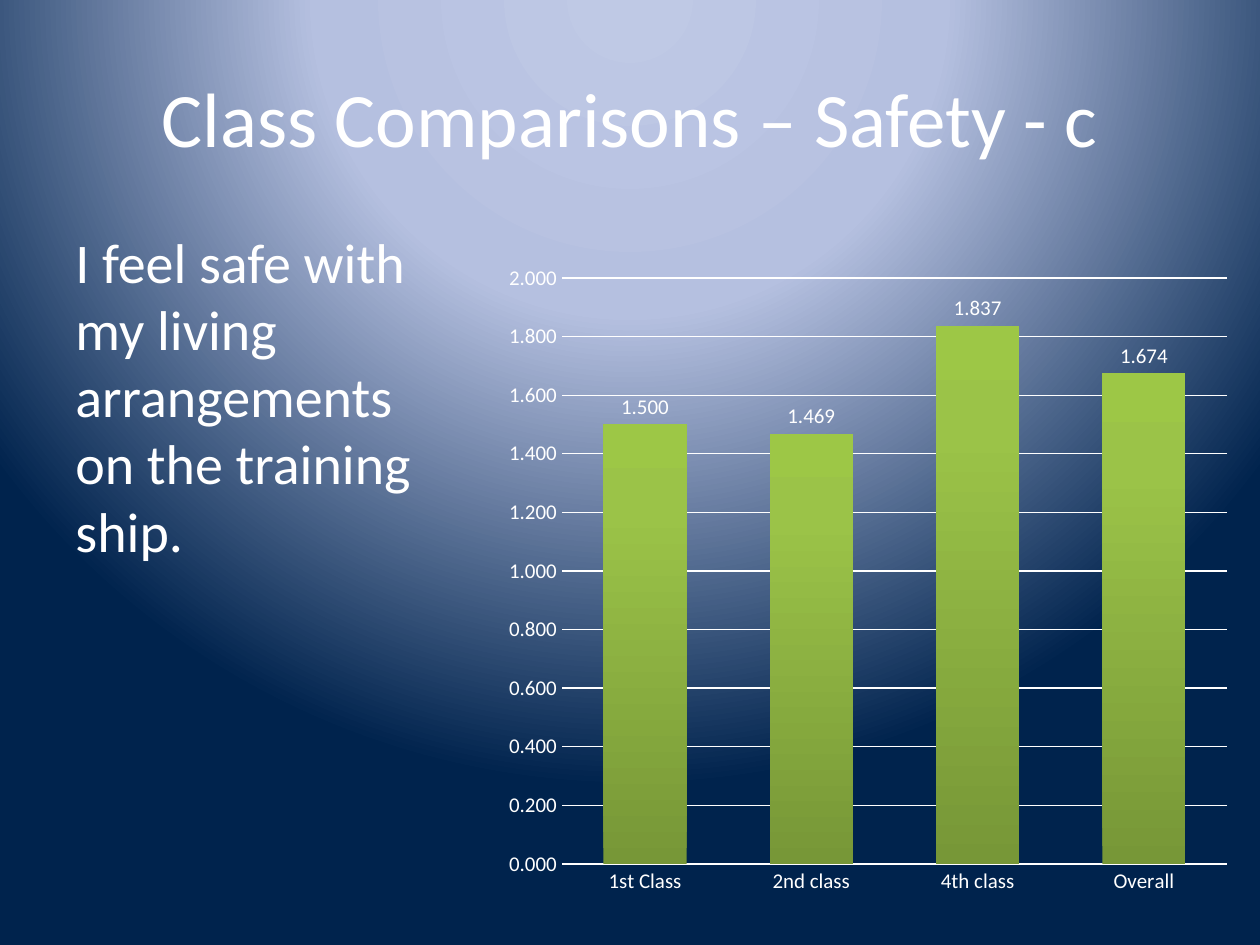
"""Build a slide comparing how safe each class feels on the training ship."""
from lxml.etree import SubElement
from pptx import Presentation
from pptx.chart.data import CategoryChartData
from pptx.dml.color import RGBColor
from pptx.enum.chart import XL_CHART_TYPE, XL_LABEL_POSITION, XL_TICK_MARK
from pptx.enum.text import MSO_ANCHOR, PP_ALIGN
from pptx.oxml import parse_xml
from pptx.oxml.ns import nsdecls, qn
from pptx.util import Emu, Pt

EMU_PER_PX = 914400 / 126
COLORS = {
    "text": "FFFFFF",
    "glow": "BFC9E5",
    "haze": "B5C0E0",
    "navy": "00234D",
    "bar_base": "779737",
    "bar_body": "9BC348",
    "bar_top": "9DC746",
}
PLOT_AREA = {"x": 0.08, "y": 0.04, "w": 0.92, "h": 0.9}
SAFETY_SCORES = {"1st Class": 1.5, "2nd class": 1.469, "4th class": 1.837, "Overall": 1.674}


def px(length):
    return Emu(round(length * EMU_PER_PX))


def color(name):
    return RGBColor.from_string(COLORS[name])


def apply_gradient(parent, stops, direction):
    stop_xml = "".join(
        f'<a:gs pos="{percent * 1000}"><a:srgbClr val="{COLORS[name]}"/></a:gs>'
        for percent, name in stops
    )
    gradient = parse_xml(
        f'<a:gradFill {nsdecls("a")} rotWithShape="1">'
        f"<a:gsLst>{stop_xml}</a:gsLst>{direction}</a:gradFill>"
    )
    parent.replace(parent.find(qn("a:solidFill")), gradient)


class SlideBuilder:
    def __init__(self, slide, font="Calibri"):
        self.slide = slide
        self.font = font

    def style(self, font, size):
        font.name = self.font
        font.size = Pt(size)
        font.color.rgb = color("text")

    def background(self, stops):
        self.slide.background.fill.solid()
        apply_gradient(
            self.slide.element.find(".//" + qn("p:bgPr")),
            stops,
            '<a:path path="circle">'
            '<a:fillToRect l="50000" t="-80000" r="50000" b="180000"/></a:path>',
        )

    def set_text(self, shape, text, size, align, anchor):
        frame = shape.text_frame
        frame.word_wrap = True
        frame.vertical_anchor = anchor
        frame.text = text
        paragraph = frame.paragraphs[0]
        paragraph.alignment = align
        for run in paragraph.runs:
            self.style(run.font, size)

    def title(self, text, left, top, width, height):
        heading = self.slide.shapes.title
        heading.left, heading.top = px(left), px(top)
        heading.width, heading.height = px(width), px(height)
        self.set_text(heading, text, 44, PP_ALIGN.CENTER, MSO_ANCHOR.MIDDLE)

    def body(self, text, left, top, width, height):
        statement = self.slide.shapes.add_textbox(px(left), px(top), px(width), px(height))
        self.set_text(statement, text, 32, PP_ALIGN.LEFT, MSO_ANCHOR.TOP)

    def column_chart(self, scores, left, top, width, height):
        data = CategoryChartData(number_format="0.000")
        data.categories = list(scores)
        data.add_series("Series 1", list(scores.values()))
        chart = self.slide.shapes.add_chart(
            XL_CHART_TYPE.COLUMN_CLUSTERED, px(left), px(top), px(width), px(height), data
        ).chart
        chart.has_title = False
        chart.has_legend = False
        self.style(chart.font, 10)
        self.format_axes(chart)
        self.format_columns(chart)
        self.place_plot(chart)

    def format_axes(self, chart):
        for axis in (chart.category_axis, chart.value_axis):
            axis.major_tick_mark = XL_TICK_MARK.NONE
            axis.minor_tick_mark = XL_TICK_MARK.NONE
            self.style(axis.tick_labels.font, 12)
        baseline = chart.category_axis.format.line
        baseline.color.rgb = color("text")
        baseline.width = Pt(1)
        scale = chart.value_axis
        scale.minimum_scale, scale.maximum_scale, scale.major_unit = 0, 2, 0.2
        scale.tick_labels.number_format = "0.000"
        scale.tick_labels.number_format_is_linked = False
        scale.format.line.fill.background()
        scale.has_major_gridlines = True
        grid = scale.major_gridlines.format.line
        grid.color.rgb = color("text")
        grid.width = Pt(0.75)

    def format_columns(self, chart):
        columns = chart.plots[0]
        columns.vary_by_categories = False
        columns.gap_width = 100
        columns.overlap = -24
        series = columns.series[0]
        series.invert_if_negative = False
        series.format.fill.solid()
        apply_gradient(
            series._element.find(qn("c:spPr")),
            [(0, "bar_base"), (80, "bar_body"), (100, "bar_top")],
            '<a:lin ang="16200000" scaled="0"/>',
        )
        labels = series.data_labels
        labels.show_value = True
        labels.position = XL_LABEL_POSITION.OUTSIDE_END
        labels.number_format = "0.000"
        labels.number_format_is_linked = False
        self.style(labels.font, 12)

    def place_plot(self, chart):
        plot_area = chart._chartSpace.find(".//" + qn("c:plotArea"))
        for layout in plot_area.findall(qn("c:layout")):
            plot_area.remove(layout)
        layout = parse_xml(f'<c:layout {nsdecls("c")}/>')
        manual = SubElement(layout, qn("c:manualLayout"))
        settings = {"layoutTarget": "inner", "xMode": "edge", "yMode": "edge", **PLOT_AREA}
        for tag, value in settings.items():
            SubElement(manual, qn(f"c:{tag}")).set("val", str(value))
        plot_area.insert(0, layout)


def main():
    presentation = Presentation()
    presentation.slide_width, presentation.slide_height = px(1260), px(945)
    builder = SlideBuilder(presentation.slides.add_slide(presentation.slide_layouts[5]))
    builder.background([(0, "glow"), (40, "haze"), (100, "navy")])
    builder.title("Class Comparisons – Safety - c", 63, 38, 1134, 157)
    builder.body(
        "I feel safe with my living arrangements on the training ship.", 63, 221, 409, 624
    )
    builder.column_chart(SAFETY_SCORES, 504, 252, 724, 651)
    presentation.save("out.pptx")


if __name__ == "__main__":
    main()
